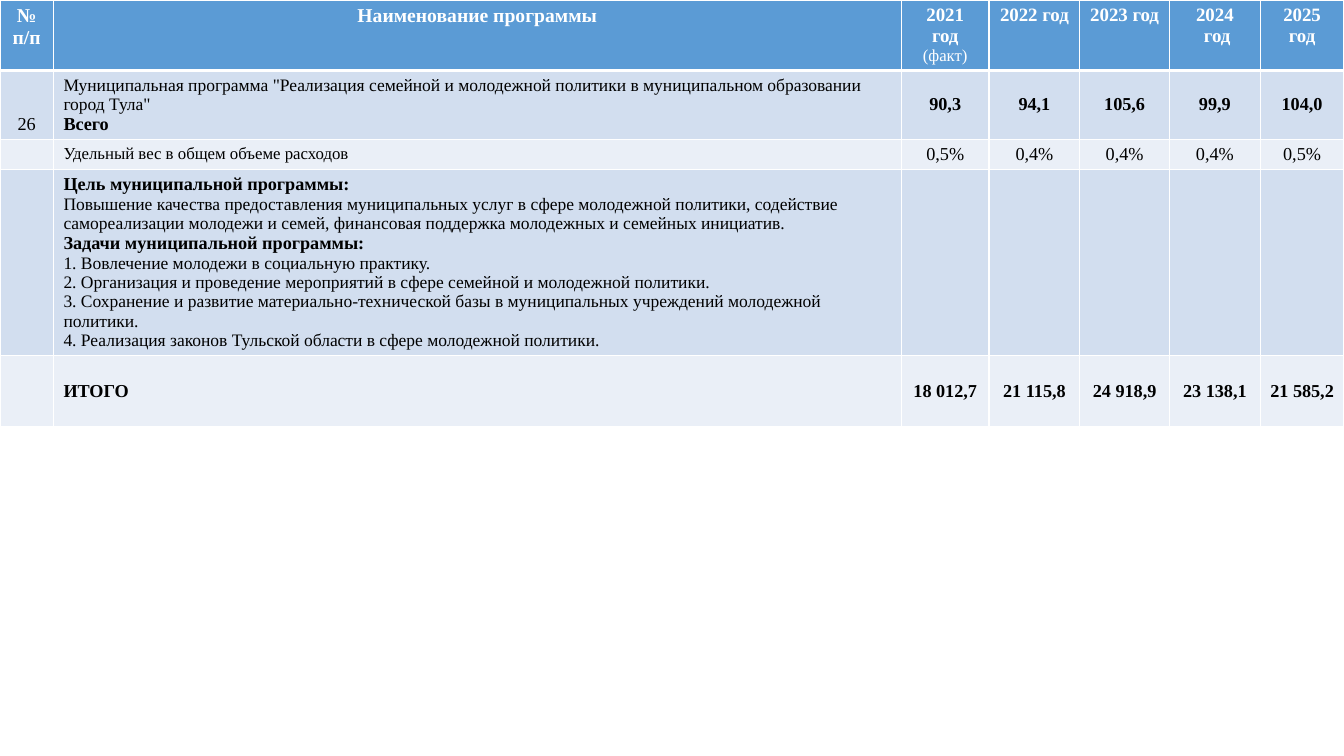
from lxml.etree import SubElement
from pptx import Presentation
from pptx.dml.color import RGBColor
from pptx.enum.text import MSO_ANCHOR as Anchor, PP_ALIGN as Align
from pptx.oxml.ns import qn
from pptx.util import Inches, Pt

# Content: a cell is a list of paragraphs, a paragraph a list of (text, size, bold)
FONT = "Times New Roman"
COLORS = {"header": "5B9BD5", "band": "D2DEEF", "light": "EAEFF7",
          "border": "FFFFFF", "header_text": "FFFFFF", "text": "000000"}


def line(text, size=13, bold=False):
    return [(text, size, bold)]


def values(texts, bold=True):
    return [[line(text, 13, bold)] for text in texts]


HEADER = [
    [line("№ п/п", 14, True)],
    [line("Наименование программы", 14, True)],
    [[("2021 год ", 13.5, True), ("(факт)", 12, False)]],
    [line("2022 год", 13.5, True)],
    [line("2023 год", 13.5, True)],
    [line("2024", 13.5, True), line(" год", 13.5, True)],
    [line("2025", 13.5, True), line("год", 13.5, True)],
]
PROGRAM = [
    line('Муниципальная программа "Реализация семейной и молодежной политики '
         'в муниципальном образовании город Тула"', 12.5),
    line("Всего", 13, True),
]
GOALS = [
    line("Цель муниципальной программы:", 13, True),
    line("Повышение качества предоставления муниципальных услуг в сфере молодежной "
         "политики, содействие самореализации молодежи и семей, финансовая поддержка "
         "молодежных и семейных инициатив.", 12.5),
    line("Задачи муниципальной программы:", 13, True),
    line("1. Вовлечение молодежи в социальную практику.", 12.5),
    line("2. Организация и проведение мероприятий в сфере семейной и молодежной "
         "политики.", 12.5),
    line("3. Сохранение и развитие материально-технической базы в муниципальных "
         "учреждений молодежной политики.", 12.5),
    line("4. Реализация законов Тульской области в сфере молодежной политики.", 12.5),
]
ROWS = [
    HEADER,
    [[line("26")], PROGRAM, *values(["90,3", "94,1", "105,6", "99,9", "104,0"])],
    [[], [line("Удельный вес в общем объеме расходов", 12)],
     *values(["0,5%", "0,4%", "0,4%", "0,4%", "0,5%"], bold=False)],
    [[], GOALS] + [[]] * 5,
    [[], [line("ИТОГО", 13, True)],
     *values(["18 012,7", "21 115,8", "24 918,9", "23 138,1", "21 585,2"])],
]

# Grid in inches; the name column takes the width left over
SLIDE_WIDTH, SLIDE_HEIGHT = 13.33, 7.5
NUMBER_WIDTH, YEAR_WIDTHS = 0.53, [0.87, 0.9, 0.89, 0.9, 0.83]
NAME_WIDTH = SLIDE_WIDTH - NUMBER_WIDTH - sum(YEAR_WIDTHS)
COLUMN_WIDTHS = [NUMBER_WIDTH, NAME_WIDTH, *YEAR_WIDTHS]
ROW_HEIGHTS = [0.65, 0.65, 0.28, 1.74, 0.71]
NAME_COLUMN, TOTAL_ROW = 1, len(ROWS) - 1


def anchor_for(row, column):
    if row == 1 and column == 0:
        return Anchor.BOTTOM
    if row == TOTAL_ROW or (row > 0 and column > NAME_COLUMN):
        return Anchor.MIDDLE
    return Anchor.TOP


def add_borders(cell, bottom_widths):
    properties = cell._tc.get_or_add_tcPr()
    top_width, bottom_width = bottom_widths
    sides = {"a:lnL": 1, "a:lnR": 1, "a:lnT": top_width, "a:lnB": bottom_width}
    for index, (side, width) in enumerate(sides.items()):
        border = SubElement(properties, qn(side), w=str(Pt(width)))
        fill = SubElement(border, qn("a:solidFill"))
        SubElement(fill, qn("a:srgbClr"), val=COLORS["border"])
        properties.insert(index, border)


def write_cell(cell, paragraphs, align, color):
    frame = cell.text_frame
    if not paragraphs:
        # A small end mark keeps empty cells from stretching their row
        SubElement(frame.paragraphs[0]._p, qn("a:endParaRPr"), sz="1200")
    for index, runs in enumerate(paragraphs):
        paragraph = frame.paragraphs[0] if index == 0 else frame.add_paragraph()
        paragraph.alignment = align
        for text, size, bold in runs:
            run = paragraph.add_run()
            run.text = text
            run.font.name = FONT
            run.font.size = Pt(size)
            run.font.bold = bold
            run.font.color.rgb = RGBColor.from_string(color)


# Slide and table
presentation = Presentation()
presentation.slide_width = Inches(SLIDE_WIDTH)
presentation.slide_height = Inches(SLIDE_HEIGHT)
slide = presentation.slides.add_slide(presentation.slide_layouts[6])
table = slide.shapes.add_table(
    len(ROWS), len(COLUMN_WIDTHS), 0, 0,
    Inches(SLIDE_WIDTH), Inches(sum(ROW_HEIGHTS))).table
for column, width in zip(table.columns, COLUMN_WIDTHS):
    column.width = Inches(width)
for row, height in zip(table.rows, ROW_HEIGHTS):
    row.height = Inches(height)

# Cells
for row, cells in enumerate(ROWS):
    is_header = row == 0
    fill = "header" if is_header else "band" if row % 2 else "light"
    text_color = COLORS["header_text" if is_header else "text"]
    for column, paragraphs in enumerate(cells):
        cell = table.cell(row, column)
        cell.fill.solid()
        cell.fill.fore_color.rgb = RGBColor.from_string(COLORS[fill])
        cell.vertical_anchor = anchor_for(row, column)
        left = column == NAME_COLUMN and not is_header
        write_cell(cell, paragraphs, Align.LEFT if left else Align.CENTER, text_color)
        add_borders(cell, (3 if row == 1 else 1, 3 if is_header else 1))

presentation.save("out.pptx")
